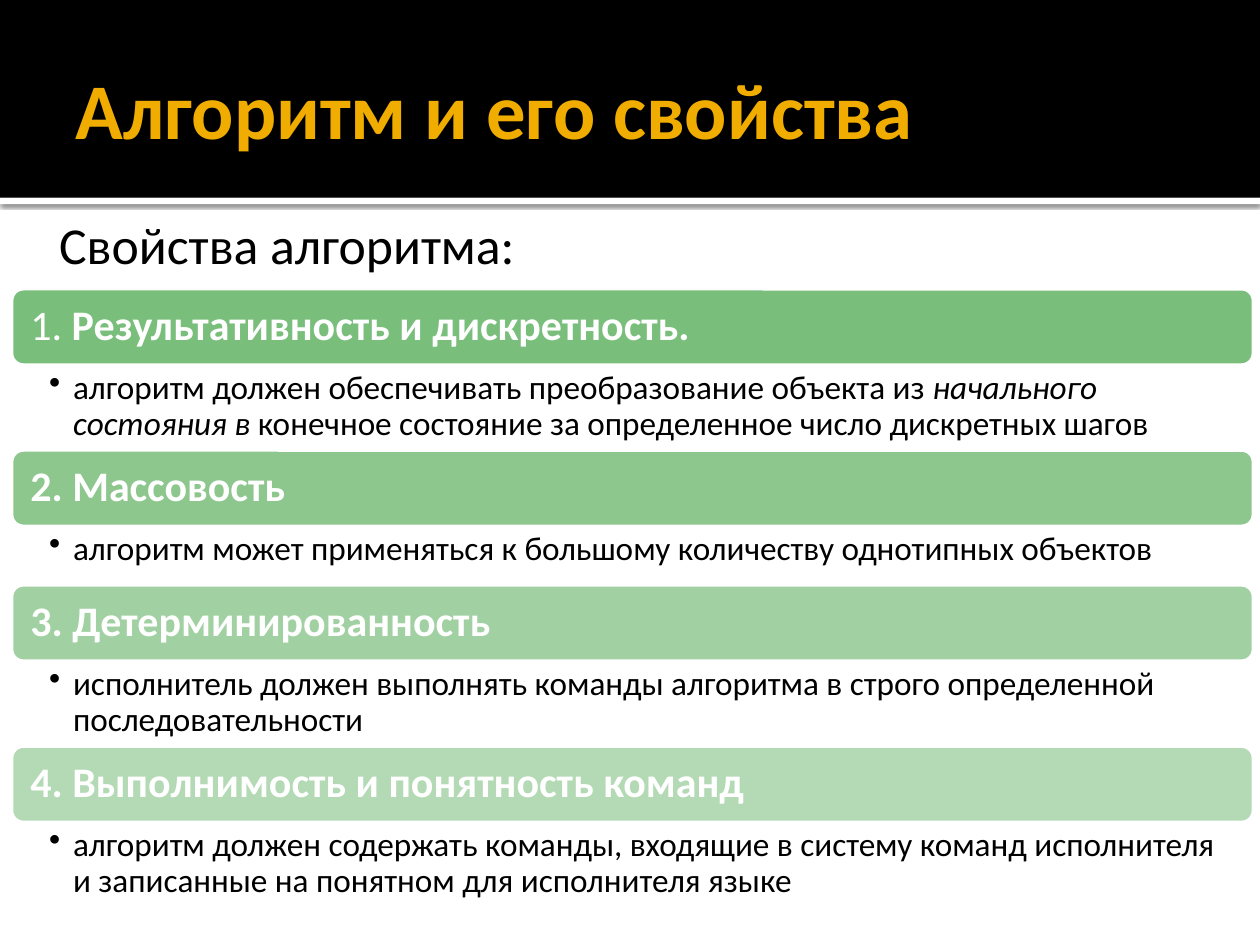
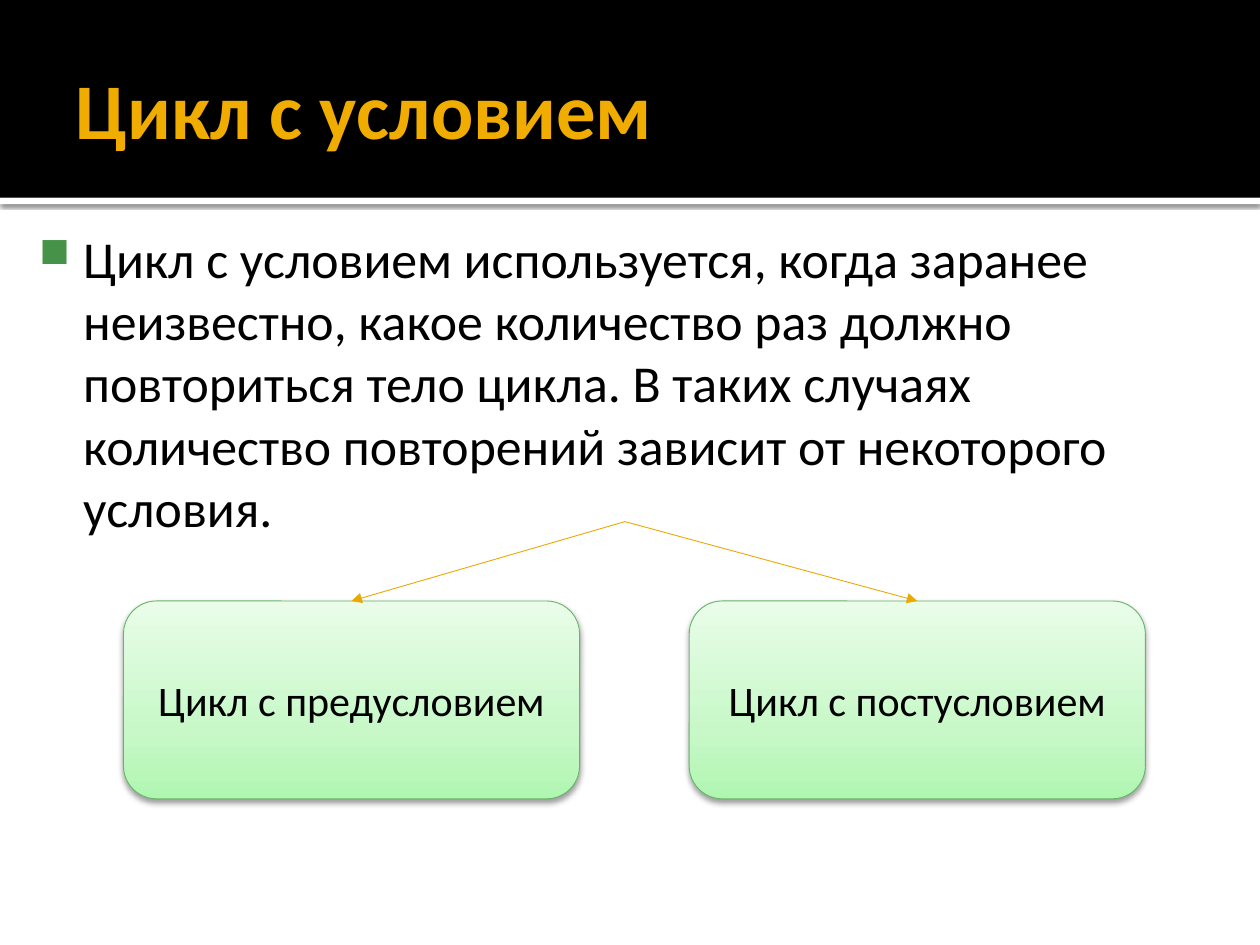
import pptx
import pptx.util
import pptx.dml.color
import pptx.enum.shapes
import pptx.enum.text
import pptx.oxml
import pptx.oxml.ns

COLS, ROWS = 100, 75
FONT = "Calibri"
BLACK, WHITE, GOLD = "000000", "FFFFFF", "F0AD00"
GREEN, MARK, EDGE, ARROW = "6BB76D", "479249", "67B569", "EBA900"
FADE = [(0, "B0F6B1"), (35, "C8F8C8"), (100, "E9FDE9")]
BAND = 15.7                      # rows taken by the title band
BODY_PADS = (0.6, 1, 1, 0.5)
RECT = pptx.enum.shapes.MSO_SHAPE.RECTANGLE
ROUND = pptx.enum.shapes.MSO_SHAPE.ROUNDED_RECTANGLE
ALIGN = pptx.enum.text.PP_ALIGN
ANCHOR = pptx.enum.text.MSO_ANCHOR

deck = pptx.Presentation()
deck.slide_width = pptx.util.Inches(10)
deck.slide_height = pptx.util.Inches(7.5)
layout = deck.slide_layouts[5]


def across(n):
    return round(deck.slide_width * n / COLS)


def down(n):
    return round(deck.slide_height * n / ROWS)


def place(box):
    x, y, w, h = box
    return across(x), down(y), across(w), down(h)


def color(code):
    return pptx.dml.color.RGBColor.from_string(code)


def node(xml):
    space = pptx.oxml.ns.nsdecls("a")
    return pptx.oxml.parse_xml(xml.replace(">", f" {space}>", 1)
                               if "/>" not in xml.split(">")[0] + ">"
                               else xml.replace("/>", f" {space}/>", 1))


def tint(code, share):
    return f'<a:srgbClr val="{code}"><a:alpha val="{round(share * 1000)}"/></a:srgbClr>'


def shade(shape, share, blur, drop):
    """Give a shape a soft shadow straight below it."""
    glow = node(f'<a:outerShdw blurRad="{pptx.util.Pt(blur)}" dist="{pptx.util.Pt(drop)}" '
                f'dir="5400000" rotWithShape="0">{tint(BLACK, share)}</a:outerShdw>')
    shape.element.spPr.find(pptx.oxml.ns.qn("a:effectLst")).append(glow)


def draw(shapes, kind, box, fill=None, edge=None, width=0.5):
    shape = shapes.add_shape(kind, *place(box))
    shape.shadow.inherit = False
    if fill:
        shape.fill.solid()
        shape.fill.fore_color.rgb = color(fill)
    if edge:
        shape.line.color.rgb = color(edge)
        shape.line.width = pptx.util.Pt(width)
    else:
        shape.line.fill.background()
    return shape


def write(shape, parts, size, ink=BLACK, pads=(1, 0.5, 1, 0.5),
          anchor=ANCHOR.TOP, align=ALIGN.LEFT, space=None):
    """Fill a shape with one paragraph; parts are (text, style) pairs."""
    frame = shape.text_frame
    frame.word_wrap = True
    frame.auto_size = pptx.enum.text.MSO_AUTO_SIZE.NONE
    frame.vertical_anchor = anchor
    frame.margin_left, frame.margin_right = across(pads[0]), across(pads[2])
    frame.margin_top, frame.margin_bottom = down(pads[1]), down(pads[3])
    para = frame.paragraphs[0]
    para.alignment = align
    if space:
        para.line_spacing = space
    for text, style in parts:
        run = para.add_run()
        run.text = text
        font = run.font
        font.name, font.size = FONT, pptx.util.Pt(size)
        font.bold, font.italic = "b" in style, "i" in style
        font.color.rgb = color(ink)
    return para


def indent(para, left, first=0, sign=None, ink=None, size=100):
    props = para._p.get_or_add_pPr()
    props.set("marL", str(across(left)))
    props.set("indent", str(across(first)))
    if sign:
        if ink:
            props.append(node(f'<a:buClr><a:srgbClr val="{ink}"/></a:buClr>'))
        props.append(node(f'<a:buSzPct val="{size * 1000}"/>'))
        props.append(node(f'<a:buChar char="{sign}"/>'))


def bands(slide):
    """Draw the title band and its rule, then hand them to the layout."""
    rule = draw(slide.shapes, RECT, (0, BAND, COLS, 0.5), WHITE)
    shade(rule, 60, 2.5, 0.8)
    band = draw(slide.shapes, RECT, (0, 0, COLS, BAND), BLACK)
    for spot, part in enumerate((rule, band), 2):
        layout.shapes.element.insert(spot, part.element)


def start(title):
    slide = deck.slides.add_slide(layout)
    head = slide.shapes.title
    head.left, head.top, head.width, head.height = place((5, 1.7, 90, 13.7))
    write(head, [(title, "b")], 45, GOLD, (1, 0.5, 0.5, 0.5), ANCHOR.MIDDLE)
    return slide


def body(slide, box, text):
    area = slide.shapes.add_textbox(*place(box))
    return write(area, [(text, "")], 29.6, pads=BODY_PADS)


def traits(slide, box, items):
    """Stack fading heading bars, each with a bulleted note below."""
    x, y, w, bar = box
    group = slide.shapes.add_group_shape()
    for i, (head, note, tall) in enumerate(items):
        strip = draw(group.shapes, ROUND, (x, y, w, bar), GREEN, WHITE, 3.78)
        paint = strip.element.spPr.find(pptx.oxml.ns.qn("a:solidFill"))
        share = 90 - 40 * i / (len(items) - 1)
        paint.replace(paint[0], node(tint(GREEN, share)))
        write(strip, head, 24, WHITE, (1.3, 1, 1.3, 1), ANCHOR.MIDDLE, space=0.9)
        y += bar
        area = group.shapes.add_textbox(*place((x, y, w, tall)))
        para = write(area, note, 19, pads=(3.1, 0.3, 1.9, 0.3), space=0.9)
        indent(para, 1.9, -1.9, "•")
        y += tall


def branch(slide, box, gap, origin, names):
    """Set equal boxes in a row, with an arrow to each from one point."""
    x, y, w, h = box
    stops = "".join(f'<a:gs pos="{at * 1000}"><a:srgbClr val="{code}"/></a:gs>'
                    for at, code in FADE)
    for i, name in enumerate(names):
        card = draw(slide.shapes, ROUND, (x + i * (w + gap), y, w, h), edge=EDGE)
        geom = card.element.spPr.find(pptx.oxml.ns.qn("a:prstGeom"))
        geom.addnext(node(f'<a:gradFill rotWithShape="1"><a:gsLst>{stops}</a:gsLst>'
                          '<a:lin ang="16200000" scaled="1"/></a:gradFill>'))
        shade(card, 38, 3.5, 2)
        write(card, [(name, "")], 24, anchor=ANCHOR.MIDDLE, align=ALIGN.CENTER)
        from_x, from_y = across(origin[0]), down(origin[1])
        line = slide.shapes.add_connector(
            pptx.enum.shapes.MSO_CONNECTOR.STRAIGHT, from_x, from_y, from_x, from_y)
        line.end_connect(card, 0)
        line.line.color.rgb = color(ARROW)
        line.line.width = pptx.util.Pt(0.5)
        line.line._get_or_add_ln().append(node('<a:tailEnd type="triangle"/>'))
        line.element.spPr.append(node("<a:effectLst/>"))


def main():
    # Properties of an algorithm
    slide = start("Алгоритм и его свойства")
    bands(slide)
    indent(body(slide, (2.8, 15.9, 90, 6.3), "Свойства алгоритма:"), 1.3)
    traits(slide, (0.8, 22.8, 98.8, 6.3), [
        ([("1. ", ""), ("Результативность и дискретность.", "b")],
         [("алгоритм должен обеспечивать преобразование объекта из ", ""),
          ("начального состояния в ", "i"),
          ("конечное состояние за определенное число дискретных шагов", "")], 6.5),
        ([("2. Массовость", "b")],
         [("алгоритм может применяться к большому количеству однотипных объектов", "")],
         4.4),
        ([("3. Детерминированность", "b")],
         [("исполнитель должен выполнять команды алгоритма в строго определенной "
           "последовательности", "")], 6.5),
        ([("4. Выполнимость и понятность команд", "b")],
         [("алгоритм должен содержать команды, входящие в систему команд исполнителя "
           "и записанные на понятном для исполнителя языке", "")], 6.5),
    ])

    # Loops with a condition
    slide = start("Цикл с условием")
    para = body(slide, (1.2, 17, 96.9, 24.4),
                "Цикл с условием используется, когда заранее неизвестно, какое "
                "количество раз должно повториться тело цикла. В таких случаях "
                "количество повторений зависит от некоторого условия.")
    indent(para, 4.8, -3.5, "■", MARK, 80)
    branch(slide, (9.8, 47.7, 36.2, 15.7), 8.7, (49.6, 41.4),
           ["Цикл с предусловием", "Цикл с постусловием"])

    deck.save("out.pptx")


if __name__ == "__main__":
    main()
